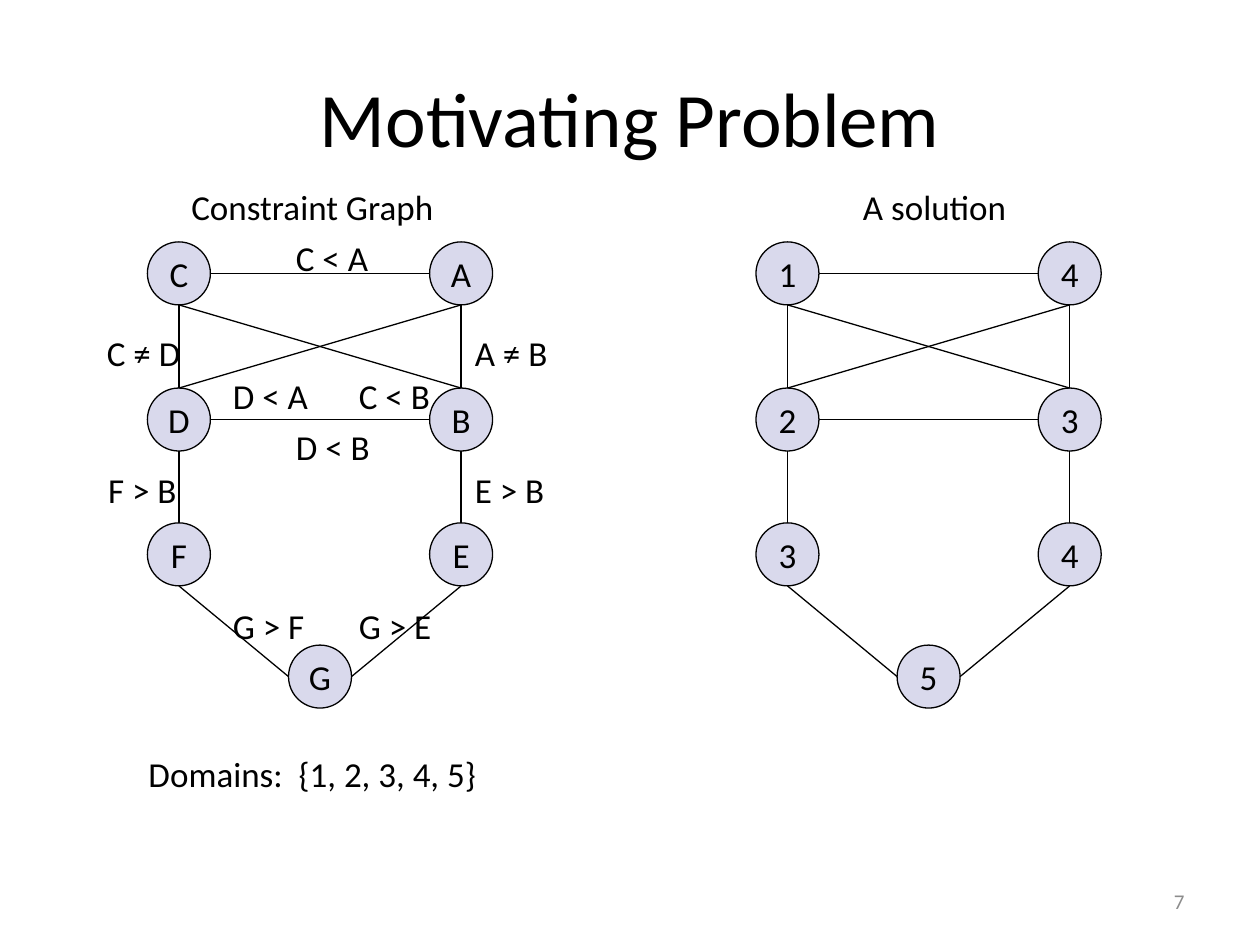
from lxml import etree
from pptx import Presentation
from pptx import util as u
from pptx.dml.color import RGBColor
from pptx.enum import shapes, text
from pptx.oxml import ns

BLACK = RGBColor(0, 0, 0)
NAVY = RGBColor(0, 0, 128)
GRAY = RGBColor(140, 140, 140)
FONT = "Calibri"
SIZE = 0.5
TOP, LEFT, BOTTOM, RIGHT = range(4)
SITES = [(0.5, 0), (0, 0.5), (0.5, 1), (1, 0.5)]

TITLE = "Motivating Problem"
SPOTS = {
    "C": (0, 1.92), "A": (2.24, 1.92),
    "D": (0, 3.08), "B": (2.24, 3.08),
    "F": (0, 4.15), "E": (2.24, 4.15),
    "G": (1.12, 5.12),
}
EDGES = [
    ("A", LEFT, "C", RIGHT), ("D", TOP, "C", BOTTOM),
    ("D", RIGHT, "B", LEFT), ("B", TOP, "A", BOTTOM),
    ("D", TOP, "A", BOTTOM), ("C", BOTTOM, "B", TOP),
    ("E", TOP, "B", BOTTOM), ("F", TOP, "D", BOTTOM),
    ("G", RIGHT, "E", BOTTOM), ("G", LEFT, "F", BOTTOM),
]
GRAPHS = [
    (1.17, {name: name for name in SPOTS}),
    (6, {"C": "1", "A": "4", "D": "2", "B": "3", "F": "3", "E": "4", "G": "5"}),
]
HEADS = [
    ("Constraint Graph", 1.42, 1.42, 2.25),
    ("Domains:  {1, 2, 3, 4, 5}", 1.08, 5.92, 2.92),
    ("A solution", 6.75, 1.42, 1.42),
]
RULES = [
    ("G > F", 1.75, 4.75, 0.78), ("C ≠ D", 0.75, 2.58, 0.79),
    ("C < A", 2.25, 1.83, 0.78), ("C < B", 2.75, 2.92, 0.77),
    ("D < A", 1.75, 2.92, 0.8), ("D < B", 2.25, 3.33, 0.79),
    ("F > B", 0.76, 3.67, 0.75), ("E > B", 3.67, 3.67, 0.76),
    ("G > E", 2.75, 4.75, 0.78), ("A ≠ B", 3.67, 2.58, 0.78),
]


def write(frame, words, size=20, color=BLACK, align=text.PP_ALIGN.LEFT):
    para = frame.paragraphs[0]
    para.alignment = align
    run = para.add_run()
    run.text = words
    run.font.name = FONT
    run.font.size = u.Pt(size)
    run.font.color.rgb = color


def add_text(slide, words, x, y, wide, high=0.44, wrap=True, **style):
    box = slide.shapes.add_textbox(*map(u.Inches, (x, y, wide, high)))
    box.text_frame.word_wrap = wrap
    box.text_frame.auto_size = text.MSO_AUTO_SIZE.SHAPE_TO_FIT_TEXT
    write(box.text_frame, words, **style)
    return box


def ink(shape):
    shape.line.color.rgb = BLACK
    shape.line.width = u.Pt(0.75)


def add_node(group, label, x, y):
    node = group.shapes.add_shape(
        shapes.MSO_SHAPE.ROUNDED_RECTANGLE, *map(u.Inches, (x, y, SIZE, SIZE)))
    node.adjustments[0] = 0.5
    node.shadow.inherit = False
    node.fill.solid()
    node.fill.fore_color.rgb = NAVY
    tint = node._element.spPr.find(ns.qn("a:solidFill"))[0]
    etree.SubElement(tint, ns.qn("a:alpha"), val="15000")
    ink(node)
    node.text_frame.word_wrap = False
    node.text_frame.vertical_anchor = text.MSO_ANCHOR.MIDDLE
    write(node.text_frame, label, align=text.PP_ALIGN.CENTER)
    return node


def site_at(node, site):
    across, down = SITES[site]
    return (int(node.left + across * node.width),
            int(node.top + down * node.height))


def add_edge(group, start, out, end, into):
    edge = group.shapes.add_connector(
        shapes.MSO_CONNECTOR.STRAIGHT, *site_at(start, out), *site_at(end, into))
    edge.begin_connect(start, out)
    edge.end_connect(end, into)
    ink(edge)
    etree.SubElement(edge._element.spPr, ns.qn("a:effectLst"))


def add_graph(slide, left, labels):
    group = slide.shapes.add_group_shape()
    nodes = {name: add_node(group, labels[name], left + x, y)
             for name, (x, y) in SPOTS.items()}
    for start, out, end, into in EDGES:
        add_edge(group, nodes[start], out, nodes[end], into)


def main():
    deck = Presentation()
    deck.slide_width, deck.slide_height = u.Inches(10), u.Inches(7.5)
    slide = deck.slides.add_slide(deck.slide_layouts[5])
    title = slide.shapes.title
    title.left, title.top, title.width, title.height = map(
        u.Inches, (0.5, 0.3, 9, 1.25))
    title.text_frame.vertical_anchor = text.MSO_ANCHOR.MIDDLE
    write(title.text_frame, TITLE, size=44, align=text.PP_ALIGN.CENTER)
    for left, labels in GRAPHS:
        add_graph(slide, left, labels)
    for head in HEADS:
        add_text(slide, *head)
    for rule in RULES:
        add_text(slide, *rule, wrap=False)
    page = add_text(slide, "7", 7.17, 6.95, 2.33, 0.4, size=12, color=GRAY,
                    align=text.PP_ALIGN.RIGHT)
    page.text_frame.auto_size = text.MSO_AUTO_SIZE.NONE
    page.text_frame.vertical_anchor = text.MSO_ANCHOR.MIDDLE
    deck.save("out.pptx")


if __name__ == "__main__":
    main()
